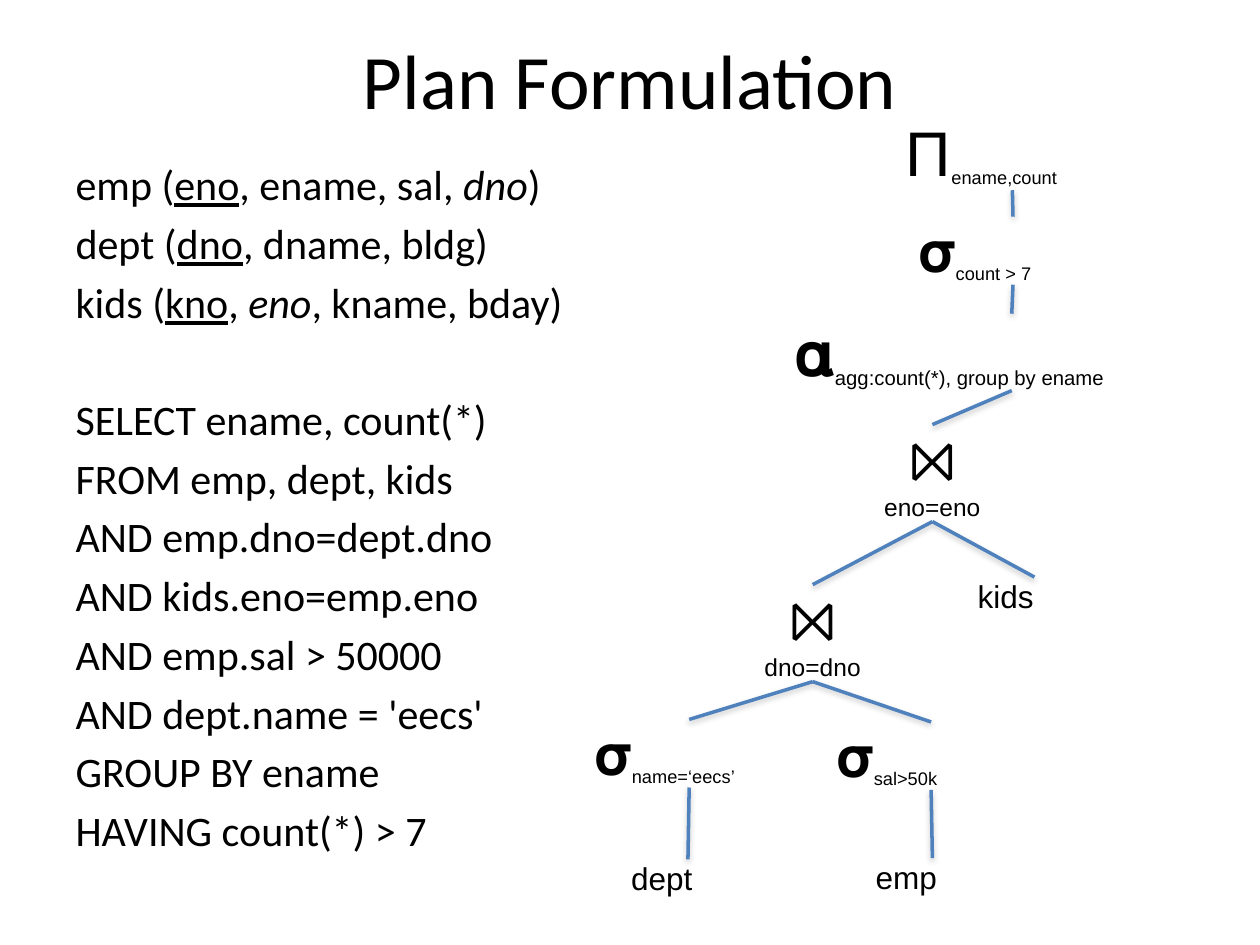
from lxml import etree
from pptx import Presentation
from pptx.dml.color import RGBColor
from pptx.enum.shapes import MSO_CONNECTOR
from pptx.enum.text import MSO_AUTO_SIZE, PP_ALIGN
from pptx.oxml.ns import qn
from pptx.util import Pt

LINE = MSO_CONNECTOR.STRAIGHT
CENTER, LEFT = PP_ALIGN.CENTER, PP_ALIGN.LEFT
GROW, FIXED = MSO_AUTO_SIZE.SHAPE_TO_FIT_TEXT, MSO_AUTO_SIZE.NONE
TOP, BOTTOM = 0, 2
PX = 9144  # 100 px to the inch
COLORS = {"text": "000000", "edge": "4F81BD", "shadow": "808080"}

# A leading _ marks a key (underlined), a leading / a foreign key (italic).
TABLES = [
    ["emp (", "_eno", ", ename, sal, ", "/dno", ")"],
    ["dept (", "_dno", ", dname, bldg)"],
    ["kids (", "_kno", ", ", "/eno", ", kname, bday)"],
]
QUERY = [
    "SELECT ename, count(*)",
    "FROM emp, dept, kids",
    "AND emp.dno=dept.dno",
    "AND kids.eno=emp.eno",
    "AND emp.sal > 50000",
    "AND dept.name = 'eecs'",
    "GROUP BY ename",
    "HAVING count(*) > 7",
]

# name: (box within the tree, [(symbol, size), ...], (subscript, size))
OPS = {
    "project": ((247, 0, 169, 61), ("Π", 36), ("ename,count", 18)),
    "having": ((257, 82, 150, 54), ("𝛔", 32), ("count > 7", 18)),
    "group": ((159, 159, 344, 61), ("𝛂", 36), ("agg:count(*), group by ename", 20)),
    "dname": ((0, 481, 150, 54), ("𝛔", 32), ("name=‘eecs’", 18)),
    "salary": ((192, 483, 150, 54), ("𝛔", 32), ("sal>50k", 18)),
}
JOINS = {
    "kidjoin": ((213, 247, 110, 77), "eno=eno"),
    "deptjoin": ((118, 374, 110, 77), "dno=dno"),
}
LEAVES = {
    "dept": (29, 592, 90, 30),
    "emp": (223, 591, 90, 30),
    "kids": (304, 368, 90, 30),
}
EDGES = [  # parent, child
    ("project", "having"), ("having", "group"), ("group", "kidjoin"),
    ("kidjoin", "deptjoin"), ("kidjoin", "kids"),
    ("deptjoin", "dname"), ("deptjoin", "salary"),
    ("dname", "dept"), ("salary", "emp"),
]


def color(name):
    return RGBColor.from_string(COLORS[name])


def place(shape, box):
    shape.left, shape.top, shape.width, shape.height = (n * PX for n in box)


def write(par, text, size, font="Arial", under=False, italic=False, sub=False):
    run = par.add_run()
    run.text = text
    face = run.font
    face.size, face.name = Pt(size), font
    face.underline, face.italic = under, italic
    face.color.rgb = color("text")
    if sub:
        run._r.get_or_add_rPr().set("baseline", "-25000")


def add_title(slide, box, text):
    title = slide.shapes.title
    place(title, box)
    par = title.text_frame.paragraphs[0]
    par.alignment = CENTER
    write(par, text, 44, font="Calibri")


def add_body(slide, box):
    body = slide.placeholders[1]
    place(body, box)
    frame = body.text_frame
    frame.auto_size = FIXED
    lines = TABLES + [[line] for line in QUERY]
    for i, parts in enumerate(lines):
        par = frame.add_paragraph() if i else frame.paragraphs[0]
        props = par._p.get_or_add_pPr()
        props.set("marL", "0")
        props.set("indent", "0")
        if i == len(TABLES):
            par.space_before = Pt(38)
        etree.SubElement(props, qn("a:buNone"))
        for part in parts:
            write(par, part.lstrip("_/"), 24, font="Calibri",
                  under=part.startswith("_"), italic=part.startswith("/"))


def add_node(slide, box, rows, align=LEFT):
    """Add a text box; each row is a list of (text, size, is subscript)."""
    node = slide.shapes.add_textbox(*(n * PX for n in box))
    frame = node.text_frame
    frame.word_wrap, frame.auto_size = True, GROW
    frame.margin_left = frame.margin_right = 0
    frame.margin_top = frame.margin_bottom = 0
    for i, row in enumerate(rows):
        par = frame.add_paragraph() if i else frame.paragraphs[0]
        par.alignment = align
        for text, size, sub in row:
            write(par, text, size, sub=sub)
    return node


def add_edge(slide, parent, child):
    edge = slide.shapes.add_connector(LINE, 0, 0, 0, 0)
    edge.begin_connect(child, TOP)
    edge.end_connect(parent, BOTTOM)
    edge.line.color.rgb = color("edge")
    edge.line.width = Pt(2)
    effects = etree.SubElement(edge._element.spPr, qn("a:effectLst"))
    shadow = etree.SubElement(effects, qn("a:outerShdw"), blurRad="40000",
                              dist="20000", dir="5400000", rotWithShape="0")
    tint = etree.SubElement(shadow, qn("a:srgbClr"), val=COLORS["shadow"])
    etree.SubElement(tint, qn("a:alpha"), val="38000")


def add_tree(slide, left, top):
    def shift(box):
        return (left + box[0], top + box[1], *box[2:])

    nodes = {}
    for name, (box, sign, label) in OPS.items():
        nodes[name] = add_node(slide, shift(box), [[(*sign, False), (*label, True)]])
    for name, (box, label) in JOINS.items():
        rows = [[("⨝", 32, False)], [(label, 14, False)]]
        nodes[name] = add_node(slide, shift(box), rows, align=CENTER)
    for name, box in LEAVES.items():
        nodes[name] = add_node(slide, shift(box), [[(name, 18, False)]])
    for parent, child in EDGES:
        add_edge(slide, nodes[parent], nodes[child])


def main():
    deck = Presentation()
    deck.slide_width, deck.slide_height = 1000 * PX, 750 * PX
    slide = deck.slides.add_slide(deck.slide_layouts[1])
    add_title(slide, (50, 0, 900, 125), "Plan Formulation")
    add_body(slide, (50, 121, 432, 495))
    add_tree(slide, 472, 90)
    deck.save("out.pptx")


if __name__ == "__main__":
    main()
